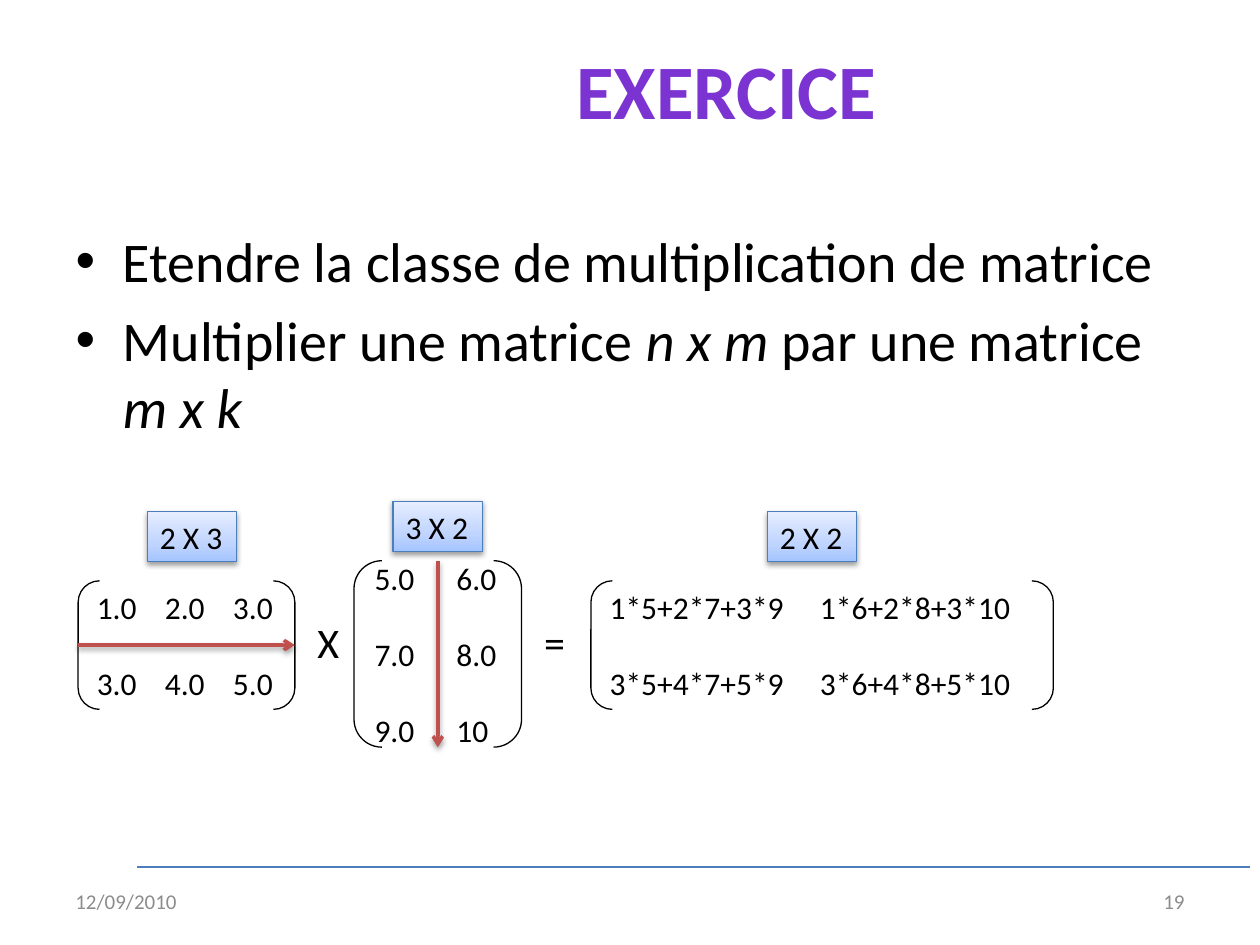
from lxml.etree import SubElement
from pptx import Presentation
from pptx.dml.color import RGBColor
from pptx.enum.shapes import MSO_CONNECTOR, MSO_SHAPE
from pptx.enum.text import MSO_ANCHOR, PP_ALIGN
from pptx.oxml import parse_xml
from pptx.oxml.ns import nsdecls, qn
from pptx.util import Inches, Pt

BLACK = RGBColor(0x00, 0x00, 0x00)
GREY = RGBColor(0x8C, 0x8C, 0x8C)
PURPLE = RGBColor(0x7B, 0x34, 0xD2)
BLUE = RGBColor(0x4B, 0x7E, 0xBC)
RED = RGBColor(0xC0, 0x50, 0x4D)
LABEL_STOPS = [
    (0, RGBColor(0xA4, 0xC4, 0xFF)),
    (35, RGBColor(0xBF, 0xD4, 0xFF)),
    (100, RGBColor(0xE6, 0xEE, 0xFF)),
]
TOP, LEFT, BOTTOM, RIGHT = range(4)  # connection sites


def add_text(para, text, size=18, color=BLACK, bold=None, italic=None, font="Calibri"):
    span = para.add_run()
    span.text = text
    span.font.name = font
    span.font.size = Pt(size)
    span.font.bold = bold
    span.font.italic = italic
    span.font.color.rgb = color


def set_effects(shape, shadow):
    """Give a shape or connector a soft shadow below it, or none at all."""
    properties = shape._element.spPr
    effects = SubElement(properties, qn("a:effectLst"))
    if shadow:
        outer = SubElement(effects, qn("a:outerShdw"), blurRad="40000",
                           dist="20000", dir="5400000", rotWithShape="0")
        tint = SubElement(outer, qn("a:srgbClr"), val=str(BLACK))
        SubElement(tint, qn("a:alpha"), val="38000")


class SlideWriter:
    """Places elements on a grid of 100 columns by 75 rows."""

    COLUMNS, ROWS = 100, 75

    def __init__(self, deck):
        self.column = deck.slide_width / self.COLUMNS
        self.row = deck.slide_height / self.ROWS
        self.page = deck.slides.add_slide(deck.slide_layouts[1])

    def area(self, left, top, width, height):
        return (round(left * self.column), round(top * self.row),
                round(width * self.column), round(height * self.row))

    def move(self, shape, *cells):
        shape.left, shape.top, shape.width, shape.height = self.area(*cells)

    def title(self, text, *cells):
        title = self.page.shapes.title
        self.move(title, *cells)
        para = title.text_frame.paragraphs[0]
        para.alignment = PP_ALIGN.CENTER
        add_text(para, text, size=44, color=PURPLE, bold=True)

    def bullets(self, items, *cells):
        body = self.page.placeholders[1]
        self.move(body, *cells)
        frame = body.text_frame
        for index, spans in enumerate(items):
            para = frame.add_paragraph() if index else frame.paragraphs[0]
            for text, italic in spans:
                add_text(para, text, size=32, italic=italic)

    def text(self, text, *cells, size=24, color=BLACK, align=PP_ALIGN.LEFT,
             anchor=MSO_ANCHOR.TOP):
        box = self.page.shapes.add_textbox(*self.area(*cells))
        frame = box.text_frame
        frame.word_wrap = True
        frame.vertical_anchor = anchor
        frame.paragraphs[0].alignment = align
        add_text(frame.paragraphs[0], text, size=size, color=color)

    def matrix(self, rows, tab_step, *cells):
        """Bracketed rows whose entries stand on equally spaced tab stops."""
        shape = self.page.shapes.add_shape(MSO_SHAPE.DOUBLE_BRACKET, *self.area(*cells))
        shape.fill.background()
        shape.line.color.rgb = BLACK
        shape.line.width = Pt(0.75)
        set_effects(shape, shadow=False)
        frame = shape.text_frame
        frame.vertical_anchor = MSO_ANCHOR.MIDDLE
        for index, entries in enumerate(rows):
            para = frame.add_paragraph() if index else frame.paragraphs[0]
            para.alignment = PP_ALIGN.LEFT
            if index:
                para.space_before = Pt(22)
            tabs = SubElement(para._p.get_or_add_pPr(), qn("a:tabLst"))
            for stop in range(1, len(entries)):
                SubElement(tabs, qn("a:tab"), pos=str(Inches(stop * tab_step)), algn="l")
            add_text(para, "\t".join(entries))
        return shape

    def size_label(self, text, left, top):
        shape = self.page.shapes.add_shape(MSO_SHAPE.RECTANGLE,
                                           *self.area(left, top, 7.1, 4))
        stops = "".join(f'<a:gs pos="{place * 1000}"><a:srgbClr val="{color}"/></a:gs>'
                        for place, color in LABEL_STOPS)
        shape._element.spPr.append(parse_xml(
            f'<a:gradFill {nsdecls("a")} rotWithShape="1"><a:gsLst>{stops}</a:gsLst>'
            '<a:lin ang="16200000" scaled="0"/></a:gradFill>'))
        shape.line.color.rgb = BLUE
        shape.line.width = Pt(0.75)
        set_effects(shape, shadow=True)
        frame = shape.text_frame
        frame.word_wrap = False
        frame.vertical_anchor = MSO_ANCHOR.TOP
        frame.paragraphs[0].alignment = PP_ALIGN.LEFT
        add_text(frame.paragraphs[0], text)

    def line(self, left, top, right, bottom, color=BLUE, width=0.75, shadow=False):
        start_x, start_y, end_x, end_y = self.area(left, top, right, bottom)
        line = self.page.shapes.add_connector(MSO_CONNECTOR.STRAIGHT,
                                              start_x, start_y, end_x, end_y)
        line.line.color.rgb = color
        line.line.width = Pt(width)
        set_effects(line, shadow)
        return line

    def arrow_across(self, shape, start, end):
        arrow = self.line(0, 0, 1, 1, color=RED, width=2, shadow=True)
        arrow.begin_connect(shape, start)
        arrow.end_connect(shape, end)
        SubElement(arrow.line._get_or_add_ln(), qn("a:tailEnd"), type="arrow")


def main():
    deck = Presentation()
    deck.slide_width, deck.slide_height = Inches(10), Inches(7.5)
    writer = SlideWriter(deck)

    # Title and task
    writer.line(10.9, 68.8, 99.2, 68.8)
    writer.title("EXERCICE", 17.2, 0.8, 80.9, 12.5)
    writer.bullets([
        [("Etendre la classe de multiplication de matrice", None)],
        [("Multiplier une matrice ", None), ("n x m ", True),
         ("par une matrice ", None), ("m x k", True)],
    ], 5, 17.5, 90, 49.5)

    # Footer
    footer = dict(size=12, color=GREY, anchor=MSO_ANCHOR.MIDDLE)
    writer.text("12/09/2010", 5, 69.5, 23.3, 4, **footer)
    writer.text("19", 71.7, 69.5, 23.3, 4, align=PP_ALIGN.RIGHT, **footer)

    # Matrix product
    first = writer.matrix([("1.0", "2.0", "3.0"), ("3.0", "4.0", "5.0")],
                          0.54, 6.2, 46.1, 17.2, 10.2)
    second = writer.matrix([("5.0", "6.0"), ("7.0", "8.0"), ("9.0", "10")],
                           0.65, 28.1, 44.5, 13.3, 14.8)
    writer.matrix([("1*5+2*7+3*9", "1*6+2*8+3*10"), ("3*5+4*7+5*9", "3*6+4*8+5*10")],
                  1.67, 46.9, 46.1, 36.7, 10.2)
    for sign, left in (("X", 24.2), ("=", 42.2)):
        writer.text(sign, left, 48.4, 3.8, 5)

    # Row and column directions
    writer.arrow_across(first, LEFT, RIGHT)
    writer.arrow_across(second, TOP, BOTTOM)

    # Matrix sizes
    for text, left, top in (("2 X 3", 11.7, 40.6), ("3 X 2", 31.2, 39.8),
                            ("2 X 2", 60.9, 40.6)):
        writer.size_label(text, left, top)

    deck.save("out.pptx")


if __name__ == "__main__":
    main()
